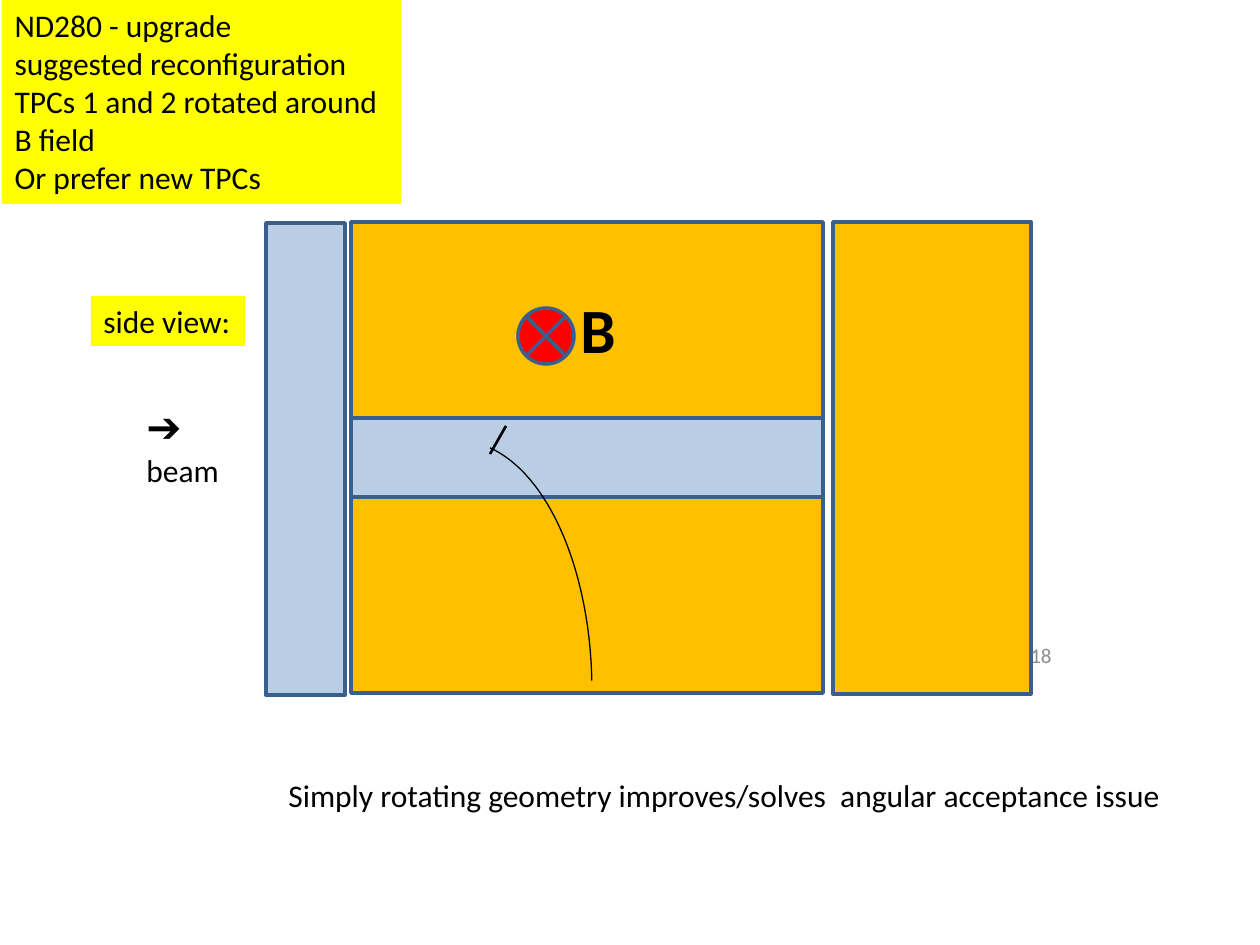
from lxml import etree
from pptx import Presentation
from pptx.dml.color import RGBColor
from pptx.enum.shapes import MSO_CONNECTOR, MSO_SHAPE
from pptx.enum.text import MSO_ANCHOR, PP_ALIGN
from pptx.oxml.ns import qn
from pptx.util import Emu, Pt

RECT, ARC = MSO_SHAPE.RECTANGLE, MSO_SHAPE.ARC
CROSS = MSO_SHAPE.FLOWCHART_SUMMING_JUNCTION
LEFT, RIGHT = PP_ALIGN.LEFT, PP_ALIGN.RIGHT
TOP, MIDDLE = MSO_ANCHOR.TOP, MSO_ANCHOR.MIDDLE

BLACK = RGBColor(0x00, 0x00, 0x00)
GREY = RGBColor(0x8C, 0x8C, 0x8C)
YELLOW = RGBColor(0xFF, 0xFF, 0x00)
ORANGE = RGBColor(0xFF, 0xC0, 0x00)
PALE = RGBColor(0xB9, 0xCD, 0xE5)
RED = RGBColor(0xFF, 0x00, 0x00)
BLUE = RGBColor(0x3A, 0x5F, 0x8C)

PX = 914400 / 126


def scale(*nums):
    """Turn px into EMU."""
    return [Emu(round(n * PX)) for n in nums]


def write(shape, text, size=18, color=BLACK, bold=False,
          align=LEFT, anchor=TOP, wrap=False):
    frame = shape.text_frame
    frame.text = text
    frame.word_wrap = wrap
    frame.vertical_anchor = anchor
    look = {"name": "Calibri", "size": Pt(size), "bold": bold}
    for para in frame.paragraphs:
        para.alignment = align
        for key, value in look.items():
            setattr(para.font, key, value)
        para.font.color.rgb = color


deck = Presentation()
deck.slide_width, deck.slide_height = scale(1260, 945)
slide = deck.slides.add_slide(deck.slide_layouts[5])
shapes = slide.shapes

# Yellow notes
title = shapes.title
title.left, title.top, title.width, title.height = scale(2, 0, 399, 204)
view = shapes.add_shape(RECT, *scale(91, 296, 154, 50))
view.shadow.inherit = False
view.line.fill.background()
notes = [
    (title, "ND280 - upgrade\nsuggested reconfiguration\n"
            "TPCs 1 and 2 rotated around\nB field\nOr prefer new TPCs"),
    (view, "side view:"),
]
for note, text in notes:
    note.fill.solid()
    note.fill.fore_color.rgb = YELLOW
    write(note, text)

# Detector blocks and field symbol
LONG, WIDE, THIN = 472, 198, 79
blocks = [
    (RECT, (351, 222, LONG, WIDE), ORANGE),
    (RECT, (266, 223, THIN, LONG), PALE),
    (RECT, (351, 495, LONG, WIDE), ORANGE),
    (RECT, (351, 418, LONG, THIN), PALE),
    (RECT, (833, 222, WIDE, LONG), ORANGE),
    (CROSS, (518, 308, 56, 56), RED),
]
for kind, box, color in blocks:
    block = shapes.add_shape(kind, *scale(*box))
    block.shadow.inherit = False
    block.fill.solid()
    block.fill.fore_color.rgb = color
    block.line.color.rgb = BLUE
    block.line.width = Pt(2)

# Particle track: arc angles are in units of 100000/60000 degree
track = shapes.add_shape(ARC, *scale(326, 441, 266, 498))
track.shadow.inherit = False
track.fill.background()
for i, angle in enumerate((277.28, 355.96)):
    track.adjustments[i] = angle * 0.6
track.line.color.rgb = BLACK
track.line.width = Pt(0.75)

tick = shapes.add_connector(MSO_CONNECTOR.STRAIGHT, *scale(490, 454, 506, 426))
tick.line.color.rgb = BLACK
tick.line.width = Pt(1.5)
etree.SubElement(tick._element.spPr, qn("a:effectLst"))

# Labels
labels = [
    ((568, 284, 60, 89), "B", {"size": 36, "bold": True}),
    ((134, 394, 106, 102), "➔\nbeam", {}),
    ((770, 630, 294, 50), "18", {"size": 12, "color": GREY, "align": RIGHT,
                                 "anchor": MIDDLE, "wrap": True}),
    ((276, 770, 915, 50),
     "Simply rotating geometry improves/solves  angular acceptance issue", {}),
]
for box, text, look in labels:
    label = shapes.add_textbox(*scale(*box))
    write(label, text, **look)
    if text.startswith("➔"):
        label.text_frame.paragraphs[0].font.size = Pt(24)

deck.save("out.pptx")
